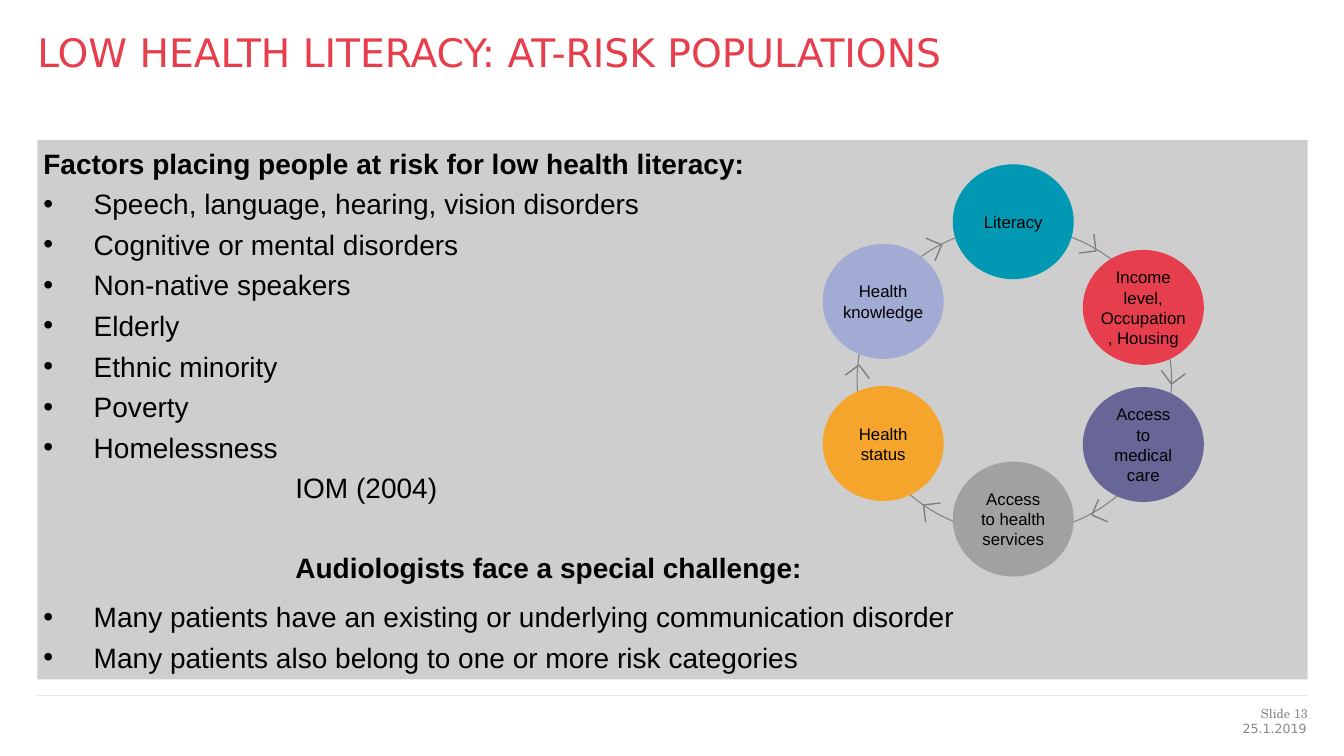
from dataclasses import dataclass
from math import cos, radians, sin

from lxml.etree import SubElement
from pptx import Presentation
from pptx.dml.color import RGBColor
from pptx.enum.shapes import MSO_CONNECTOR as Connector, MSO_SHAPE as ShapeType
from pptx.enum.text import MSO_ANCHOR as Anchor, PP_ALIGN as Align
from pptx.oxml.ns import qn
from pptx.util import Inches, Pt


@dataclass(frozen=True)
class Theme:
    heading_font: str = "DejaVu Sans"
    body_font: str = "Arial"
    number_font: str = "TeX Gyre Schola"
    title_size: int = 28
    body_size: int = 20
    node_size: int = 12
    footer_size: int = 9
    black: str = "000000"
    red: str = "E63E4D"
    teal: str = "0098B3"
    purple: str = "676696"
    orange: str = "F5A52B"
    lavender: str = "A1ABD3"
    gray: str = "A1A19F"
    panel: str = "CECECE"
    ring: str = "7F7F7F"
    rule: str = "262626"
    footer: str = "898989"


THEME = Theme()


@dataclass(frozen=True)
class TextLine:
    text: str
    before: int = 5
    bold: bool = False
    bullet: bool = False
    left: float = 0


@dataclass(frozen=True)
class Node:
    left: float
    top: float
    color: str
    lines: tuple
    inset_x: float = 0.1
    inset_y: float = 0.05


@dataclass(frozen=True)
class Chevron:
    tip_x: float
    tip_y: float
    heading: int


BODY_LINES = [
    TextLine("Factors placing people at risk for low health literacy:", before=0, bold=True),
    *(TextLine(factor, bullet=True) for factor in (
        "Speech, language, hearing, vision disorders",
        "Cognitive or mental disorders",
        "Non-native speakers",
        "Elderly",
        "Ethnic minority",
        "Poverty",
        "Homelessness",
    )),
    TextLine("IOM (2004)", left=2.5),
    TextLine("Audiologists face a special challenge:", before=33, bold=True, left=2.5),
    TextLine("Many patients have an existing or underlying communication disorder",
             before=11, bullet=True),
    TextLine("Many patients also belong to one or more risk categories", bullet=True),
]

LEFT, CENTER, RIGHT = 8.16, 9.45, 10.74
NODES = [
    Node(RIGHT, 2.48, THEME.red, ("Income level,", "Occupation, Housing"), 0, 0),
    Node(CENTER, 1.63, THEME.teal, ("Literacy",), 0),
    Node(RIGHT, 3.84, THEME.purple, ("Access to medical care",)),
    Node(LEFT, 3.83, THEME.orange, ("Health status",)),
    Node(LEFT, 2.42, THEME.lavender, ("Health knowledge",), 0, 0),
    Node(CENTER, 4.58, THEME.gray, ("Access to health services",)),
]

CHEVRON_TIPS = [(9.34, 2.43), (10.87, 2.49), (11.62, 3.81),
                (10.83, 5.11), (9.16, 5.01), (8.52, 3.62)]
CHEVRONS = [Chevron(x, y, -22 + 60 * step) for step, (x, y) in enumerate(CHEVRON_TIPS)]
CHEVRON_ARM = 0.17


def rgb(color: str) -> RGBColor:
    return RGBColor.from_string(color)


def prepare_frame(shape, inset_x: float = 0, inset_y: float = 0, anchor=Anchor.TOP):
    frame = shape.text_frame
    frame.word_wrap = True
    frame.vertical_anchor = anchor
    frame.margin_left = frame.margin_right = Inches(inset_x)
    frame.margin_top = frame.margin_bottom = Inches(inset_y)
    return frame


def add_paragraph(frame, index: int):
    return frame.add_paragraph() if index else frame.paragraphs[0]


def add_run(paragraph, text: str, font_name: str, size: int, color: str, bold: bool = False) -> None:
    run = paragraph.add_run()
    run.text = text
    run.font.name = font_name
    run.font.size = Pt(size)
    run.font.bold = bold
    run.font.color.rgb = rgb(color)


def add_label(slide, box: tuple, text: str, font_name: str, size: int, color: str, align) -> None:
    shape = slide.shapes.add_textbox(*map(Inches, box))
    paragraph = prepare_frame(shape).paragraphs[0]
    paragraph.alignment = align
    add_run(paragraph, text, font_name, size, color)


def set_indent(paragraph, line: TextLine) -> None:
    """Set the left margin and, for a bullet, a hanging half-inch indent."""
    properties = paragraph._p.get_or_add_pPr()
    hang = 0.5 if line.bullet else 0
    properties.set("marL", str(Inches(line.left + hang)))
    properties.set("indent", str(Inches(-hang)))
    if line.bullet:
        SubElement(properties, qn("a:buFont"), typeface=THEME.body_font)
        SubElement(properties, qn("a:buChar"), char="•")
    else:
        SubElement(properties, qn("a:buNone"))


def add_body(slide) -> None:
    panel = slide.shapes.add_shape(ShapeType.RECTANGLE, *map(Inches, (0.37, 1.39, 12.6, 5.35)))
    panel.shadow.inherit = False
    panel.fill.solid()
    panel.fill.fore_color.rgb = rgb(THEME.panel)
    panel.line.fill.background()
    frame = prepare_frame(panel, 0.06, 0.06)
    for index, line in enumerate(BODY_LINES):
        paragraph = add_paragraph(frame, index)
        set_indent(paragraph, line)
        paragraph.alignment = Align.LEFT
        paragraph.space_before = Pt(line.before)
        add_run(paragraph, line.text, THEME.body_font, THEME.body_size, THEME.black, line.bold)


def add_ellipse(slide, box: tuple, color: str):
    ellipse = slide.shapes.add_shape(ShapeType.OVAL, *map(Inches, box))
    ellipse.shadow.inherit = False
    ellipse.fill.solid()
    ellipse.fill.fore_color.rgb = rgb(color)
    ellipse.line.fill.background()
    return ellipse


def add_node(slide, node: Node) -> None:
    ellipse = add_ellipse(slide, (node.left, node.top, 1.2, 1.14), node.color)
    frame = prepare_frame(ellipse, node.inset_x, node.inset_y, Anchor.MIDDLE)
    for index, text in enumerate(node.lines):
        paragraph = add_paragraph(frame, index)
        paragraph.alignment = Align.CENTER
        add_run(paragraph, text, THEME.body_font, THEME.node_size, THEME.black)


def add_chevron(slide, chevron: Chevron) -> None:
    """Draw two open arms, each 45 degrees off the reversed heading."""
    start, end = (
        (Inches(chevron.tip_x + CHEVRON_ARM * cos(radians(chevron.heading + turn))),
         Inches(chevron.tip_y + CHEVRON_ARM * sin(radians(chevron.heading + turn))))
        for turn in (135, 225)
    )
    builder = slide.shapes.build_freeform(*start)
    builder.add_line_segments([(Inches(chevron.tip_x), Inches(chevron.tip_y)), end], close=False)
    shape = builder.convert_to_shape()
    shape.shadow.inherit = False
    shape.fill.background()
    shape.line.color.rgb = rgb(THEME.ring)
    shape.line.width = Pt(1)


def add_cycle(slide) -> None:
    ring = add_ellipse(slide, (8.5, 2.25, 3.12, 3.04), THEME.panel)
    ring.line.color.rgb = rgb(THEME.ring)
    ring.line.width = Pt(0.75)
    for node in NODES:
        add_node(slide, node)
    for chevron in CHEVRONS:
        add_chevron(slide, chevron)


def add_footer_rule(slide) -> None:
    rule = slide.shapes.add_connector(Connector.STRAIGHT, *map(Inches, (0.37, 6.9, 12.97, 6.9)))
    rule.line.color.rgb = rgb(THEME.rule)
    rule.line.width = Pt(0.25)
    SubElement(rule._element.spPr.find(".//" + qn("a:srgbClr")), qn("a:alpha"), val="31000")
    SubElement(rule._element.spPr, qn("a:effectLst"))


def main() -> None:
    presentation = Presentation()
    presentation.slide_width, presentation.slide_height = Inches(13.33), Inches(7.5)
    slide = presentation.slides.add_slide(presentation.slide_layouts[6])
    add_footer_rule(slide)
    add_label(slide, (0.37, 0.28, 12.6, 0.94), "LOW HEALTH LITERACY: AT-RISK POPULATIONS",
              THEME.heading_font, THEME.title_size, THEME.red, Align.LEFT)
    add_body(slide)
    add_label(slide, (11.11, 7.15, 1.85, 0.2), "25.1.2019",
              THEME.heading_font, THEME.footer_size, THEME.footer, Align.RIGHT)
    add_label(slide, (11.48, 7, 1.49, 0.14), "Slide 13",
              THEME.number_font, THEME.footer_size, THEME.footer, Align.RIGHT)
    add_cycle(slide)
    presentation.save("out.pptx")


if __name__ == "__main__":
    main()
